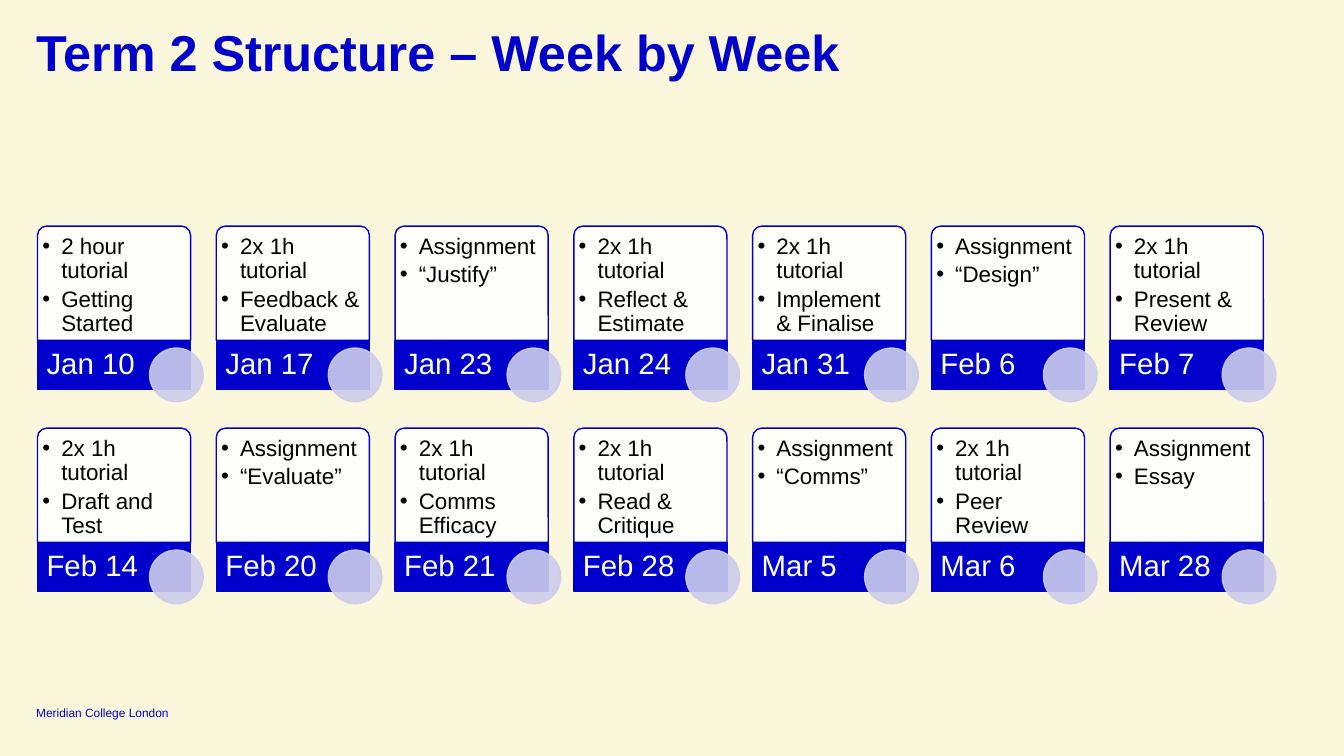
from lxml import etree
from pptx import Presentation
from pptx import util as u
from pptx.dml.color import RGBColor
from pptx.enum import shapes, text
from pptx.oxml import ns

CREAM = RGBColor(0xFB, 0xF7, 0xDC)
BLUE = RGBColor(0x00, 0x00, 0xCD)
LILAC = RGBColor(0xCC, 0xCC, 0xED)
WHITE = RGBColor(0xFF, 0xFF, 0xFF)
BLACK = RGBColor(0x00, 0x00, 0x00)

COLUMNS = 7
LEFT, TOP = 26.8, 161.5
COLUMN_STEP, ROW_STEP = 127.7, 144.3
CARD_WIDTH, CARD_HEIGHT, BAND_HEIGHT = 109.4, 81.6, 35.1

SESSIONS = [
    ("Jan 10", "2 hour tutorial", "Getting Started"),
    ("Jan 17", "2x 1h tutorial", "Feedback & Evaluate"),
    ("Jan 23", "Assignment", "“Justify”"),
    ("Jan 24", "2x 1h tutorial", "Reflect & Estimate"),
    ("Jan 31", "2x 1h tutorial", "Implement & Finalise"),
    ("Feb 6", "Assignment", "“Design”"),
    ("Feb 7", "2x 1h tutorial", "Present & Review"),
    ("Feb 14", "2x 1h tutorial", "Draft and Test"),
    ("Feb 20", "Assignment", "“Evaluate”"),
    ("Feb 21", "2x 1h tutorial", "Comms Efficacy"),
    ("Feb 28", "2x 1h tutorial", "Read & Critique"),
    ("Mar 5", "Assignment", "“Comms”"),
    ("Mar 6", "2x 1h tutorial", "Peer Review"),
    ("Mar 28", "Assignment", "Essay"),
]


class Timeline:
    font = "Arial"

    def __init__(self, deck):
        self.page = deck.slides.add_slide(deck.slide_layouts[5])
        self.page.background.fill.solid()
        self.page.background.fill.fore_color.rgb = CREAM

    def place(self, box, left, top, width, height):
        box.left, box.top = u.Pt(left), u.Pt(top)
        box.width, box.height = u.Pt(width), u.Pt(height)

    def fill_text(self, box, lines, size, color, insets=(0, 0, 0, 0),
                  anchor=text.MSO_ANCHOR.TOP, bold=False, spacing=0.9, after=0):
        frame = box.text_frame
        frame.text = "\n".join(lines)
        frame.word_wrap = True
        frame.auto_size = text.MSO_AUTO_SIZE.NONE
        frame.vertical_anchor = anchor
        (frame.margin_left, frame.margin_top,
         frame.margin_right, frame.margin_bottom) = map(u.Pt, insets)
        for para in frame.paragraphs:
            para.alignment = text.PP_ALIGN.LEFT
            para.line_spacing = spacing
            para.space_before = u.Pt(0)
            para.space_after = u.Pt(after)
            for span in para.runs:
                span.font.name = self.font
                span.font.size = u.Pt(size)
                span.font.bold = bold
                span.font.color.rgb = color

    def title(self, wording):
        box = self.page.shapes.title
        self.place(box, 25.8, 20.2, 908.6, 29.5)
        self.fill_text(box, [wording], 36, BLUE, bold=True)

    def label(self, area, lines, size, color, **style):
        box = self.page.shapes.add_textbox(*map(u.Pt, area))
        self.fill_text(box, lines, size, color, **style)
        return box

    def bullets(self, area, lines):
        box = self.label(area, lines, 16, BLACK, insets=(1.6, 4.8, 1.6, 1.6), after=2.8)
        for para in box.text_frame.paragraphs:
            properties = para._p.get_or_add_pPr()
            properties.set("marL", str(u.Pt(13.5)))
            properties.set("indent", str(u.Pt(-13.5)))
            etree.SubElement(properties, ns.qn("a:buFont"), typeface=self.font)
            etree.SubElement(properties, ns.qn("a:buChar"), char="•")

    def shape(self, kind, area, fill, line):
        shape = self.page.shapes.add_shape(kind, *map(u.Pt, area))
        shape.shadow.inherit = False
        shape.fill.solid()
        shape.fill.fore_color.rgb = fill
        shape.line.color.rgb = line
        shape.line.width = u.Pt(1)
        return shape

    def soften(self, shape, line=False):
        query = ".//a:srgbClr" if line else "./p:spPr/a:solidFill/a:srgbClr"
        for color in shape._element.xpath(query):
            etree.SubElement(color, ns.qn("a:alpha"), val="90000")

    def session(self, left, top, date, topics):
        kinds = shapes.MSO_SHAPE
        card = self.shape(kinds.ROUND_2_SAME_RECTANGLE,
                          (left, top, CARD_WIDTH, CARD_HEIGHT), WHITE, BLUE)
        card.adjustments[0] = 0.08
        card.adjustments[1] = 0
        self.soften(card)
        self.bullets((left + 1.9, top + 1.9, CARD_WIDTH - 3.8, CARD_HEIGHT - 1.9), topics)
        band_top = top + CARD_HEIGHT
        self.shape(kinds.RECTANGLE, (left, band_top, CARD_WIDTH, BAND_HEIGHT), BLUE, BLUE)
        self.label((left, band_top, 77, BAND_HEIGHT), [date], 21, WHITE,
                   insets=(6.5, 0, 2, 0), anchor=text.MSO_ANCHOR.MIDDLE)
        dot = self.shape(kinds.OVAL, (left + 80, band_top + 5.5, 38.3, 38.3), LILAC, LILAC)
        self.soften(dot, line=True)


def main():
    deck = Presentation()
    deck.slide_width, deck.slide_height = u.Pt(960), u.Pt(540)
    timeline = Timeline(deck)
    timeline.label((25.8, 503.3, 111.6, 10.8), ["Meridian College London"], 8.5, BLUE,
                   anchor=text.MSO_ANCHOR.BOTTOM, spacing=1.0)
    timeline.title("Term 2 Structure – Week by Week")
    for index, (date, *topics) in enumerate(SESSIONS):
        row, column = divmod(index, COLUMNS)
        timeline.session(LEFT + column * COLUMN_STEP, TOP + row * ROW_STEP, date, topics)
    deck.save("out.pptx")


if __name__ == "__main__":
    main()
